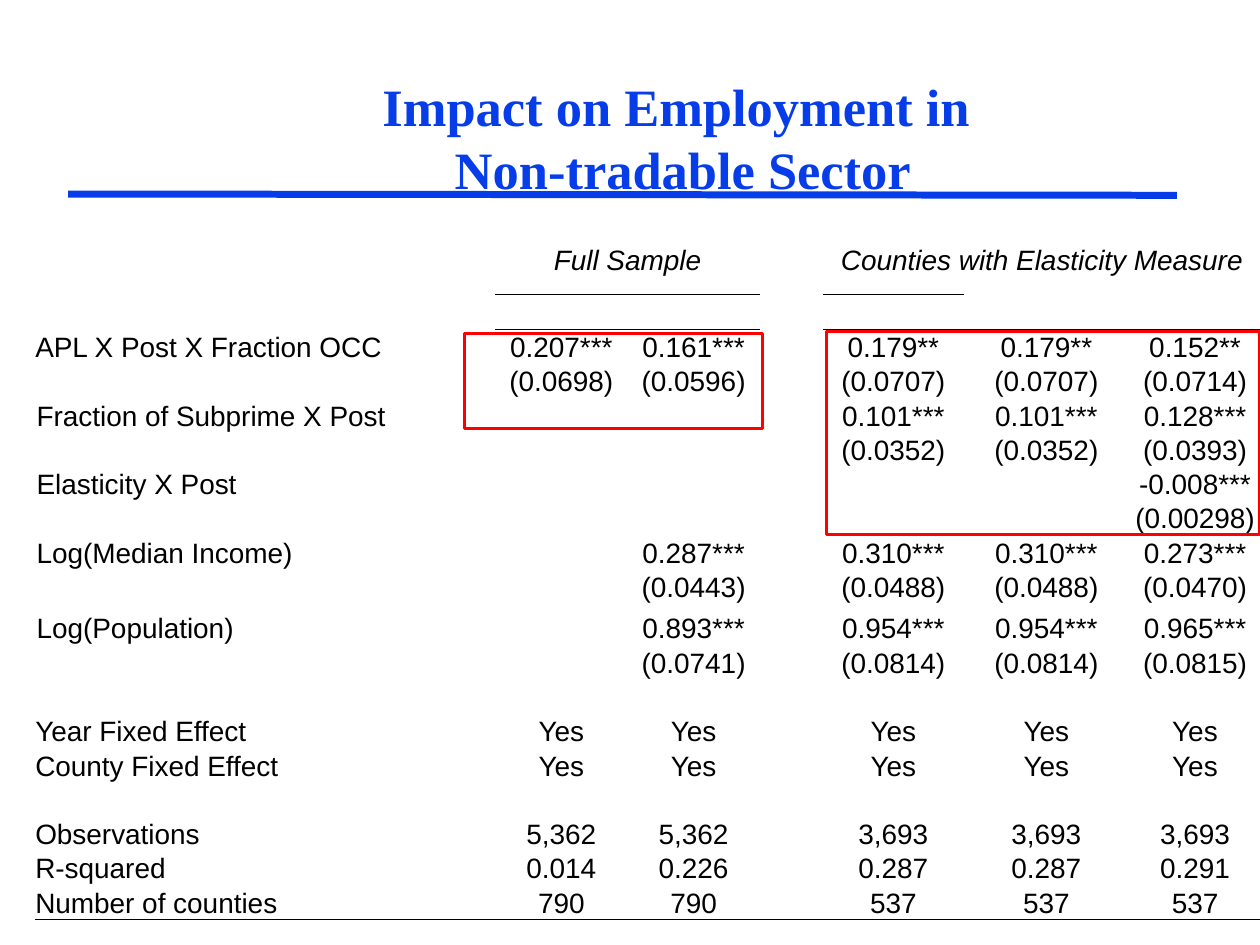
from dataclasses import dataclass

from lxml import etree
from pptx import Presentation
from pptx.dml.color import RGBColor
from pptx.enum.shapes import MSO_CONNECTOR, MSO_SHAPE
from pptx.enum.text import MSO_ANCHOR, PP_ALIGN
from pptx.oxml.ns import qn
from pptx.util import Inches, Pt

STRAIGHT = MSO_CONNECTOR.STRAIGHT
RECTANGLE = MSO_SHAPE.RECTANGLE
BOTTOM, MIDDLE = MSO_ANCHOR.BOTTOM, MSO_ANCHOR.MIDDLE
LEFT, CENTER = PP_ALIGN.LEFT, PP_ALIGN.CENTER
NO_GRID_STYLE = "{2D5ABB26-0587-4C30-8999-92F81FD0307C}"


@dataclass(frozen=True)
class Theme:
    blue: str = "063DE8"
    red: str = "FF0000"
    black: str = "000000"
    title_font: str = "Times New Roman"
    body_font: str = "Arial"
    title_size: int = 30
    body_size: int = 16
    accent_line: float = 4
    box_line: float = 1.75
    cell_line: float = 0.5


COLUMNS = [3.65, 1.05, 1.05, 0.5, 1.12, 1.31, 1.05]
ROW_HEIGHT = 0.27
TALL_ROWS = {0: 0.54, 10: 0.33}
INDENTED_ROWS = range(4, 12)
MERGES = [(0, 1, 2), (0, 4, 6)]
EMPTY = [""] * 7
YES = ["Yes", "Yes", "", "Yes", "Yes", "Yes"]
ROWS = [
    ["", "Full Sample", "", "", "Counties with Elasticity Measure", "", ""],
    EMPTY,
    ["APL X Post X Fraction OCC", "0.207***", "0.161***", "", "0.179**", "0.179**", "0.152**"],
    ["", "(0.0698)", "(0.0596)", "", "(0.0707)", "(0.0707)", "(0.0714)"],
    ["Fraction of Subprime X Post", "", "", "", "0.101***", "0.101***", "0.128***"],
    ["", "", "", "", "(0.0352)", "(0.0352)", "(0.0393)"],
    ["Elasticity X Post", "", "", "", "", "", "-0.008***"],
    ["", "", "", "", "", "", "(0.00298)"],
    ["Log(Median Income)", "", "0.287***", "", "0.310***", "0.310***", "0.273***"],
    ["", "", "(0.0443)", "", "(0.0488)", "(0.0488)", "(0.0470)"],
    ["Log(Population)", "", "0.893***", "", "0.954***", "0.954***", "0.965***"],
    ["", "", "(0.0741)", "", "(0.0814)", "(0.0814)", "(0.0815)"],
    EMPTY,
    ["Year Fixed Effect", *YES],
    ["County Fixed Effect", *YES],
    EMPTY,
    ["Observations", "5,362", "5,362", "", "3,693", "3,693", "3,693"],
    ["R-squared", "0.014", "0.226", "", "0.287", "0.287", "0.291"],
    ["Number of counties", "790", "790", "", "537", "537", "537"],
]
BORDERS = {
    0: {"B": [1, 4]},
    1: {"T": [1, 2, 4], "B": [1, 2, 4, 5, 6]},
    2: {"T": [1, 2, 4, 5, 6]},
    len(ROWS) - 1: {"B": range(7)},
}


class SlideBuilder:
    """Draws styled elements on the current slide."""

    def __init__(self, slide, theme):
        self.slide = slide
        self.theme = theme

    def format_run(self, r, font, size, color, bold=False, italic=False):
        r.font.name = font
        r.font.size = Pt(size)
        r.font.bold = bold
        r.font.italic = italic
        r.font.color.rgb = RGBColor.from_string(color)

    def title(self, text, left, top, width, height):
        t = self.theme
        box = self.slide.shapes.add_textbox(Inches(left), Inches(top), Inches(width), Inches(height))
        tf = box.text_frame
        tf.word_wrap = True
        tf.vertical_anchor = BOTTOM
        tf.text = text
        p = tf.paragraphs[0]
        p.alignment = CENTER
        for r in p.runs:
            self.format_run(r, t.title_font, t.title_size, t.blue, bold=True)

    def rule(self, x1, y1, x2, y2):
        line = self.slide.shapes.add_connector(STRAIGHT, Inches(x1), Inches(y1), Inches(x2), Inches(y2))
        line.line.color.rgb = RGBColor.from_string(self.theme.blue)
        line.line.width = Pt(self.theme.accent_line)
        etree.SubElement(line._element.spPr, qn("a:effectLst"))

    def highlight(self, left, top, width, height):
        sp = self.slide.shapes.add_shape(RECTANGLE, Inches(left), Inches(top), Inches(width), Inches(height))
        sp.shadow.inherit = False
        sp.fill.background()
        sp.line.color.rgb = RGBColor.from_string(self.theme.red)
        sp.line.width = Pt(self.theme.box_line)

    def border(self, cell, side, visible):
        tc_pr = cell._tc.get_or_add_tcPr()
        ln = etree.SubElement(tc_pr, qn(f"a:ln{side}"), w=str(Pt(self.theme.cell_line)))
        if visible:
            fill = etree.SubElement(ln, qn("a:solidFill"))
            etree.SubElement(fill, qn("a:srgbClr"), val=self.theme.black)
        else:
            etree.SubElement(ln, qn("a:noFill"))

    def cell(self, cell, text, row, col):
        t = self.theme
        cell.margin_left = cell.margin_right = Inches(0.01 if row in INDENTED_ROWS else 0)
        cell.margin_top = cell.margin_bottom = 0
        cell.vertical_anchor = BOTTOM if row else MIDDLE
        for side in "LRTB":
            self.border(cell, side, col in BORDERS.get(row, {}).get(side, []))
        cell.fill.background()
        cell.text_frame.text = text
        p = cell.text_frame.paragraphs[0]
        p.alignment = CENTER if col else LEFT
        for r in p.runs:
            self.format_run(r, t.body_font, t.body_size, t.black, italic=row == 0)
        etree.SubElement(p._p, qn("a:endParaRPr"), sz=str(t.body_size * 100))

    def table(self, left, top):
        heights = [TALL_ROWS.get(i, ROW_HEIGHT) for i in range(len(ROWS))]
        frame = self.slide.shapes.add_table(
            len(ROWS), len(COLUMNS), Inches(left), Inches(top), Inches(sum(COLUMNS)), Inches(sum(heights)))
        table = frame.table
        table.first_row = table.horz_banding = False
        table._tbl.tblPr.find(qn("a:tableStyleId")).text = NO_GRID_STYLE
        for column, width in zip(table.columns, COLUMNS):
            column.width = Inches(width)
        for i, (height, values) in enumerate(zip(heights, ROWS)):
            table.rows[i].height = Inches(height)
            for j, text in enumerate(values):
                self.cell(table.cell(i, j), text, i, j)
        for row, first, last in MERGES:
            table.cell(row, first).merge(table.cell(row, last))


def main():
    prs = Presentation()
    prs.slide_width, prs.slide_height = Inches(10), Inches(7.5)
    s = SlideBuilder(prs.slides.add_slide(prs.slide_layouts[6]), Theme())
    s.rule(0.54, 1.54, 9.34, 1.55)
    s.table(0.28, 1.8)
    s.title("Impact on Employment in \vNon-tradable Sector", 1.11, 0.19, 8.62, 1.45)
    s.highlight(3.69, 2.65, 2.36, 0.75)
    s.highlight(6.56, 2.63, 3.44, 1.61)
    prs.save("out.pptx")


if __name__ == "__main__":
    main()
